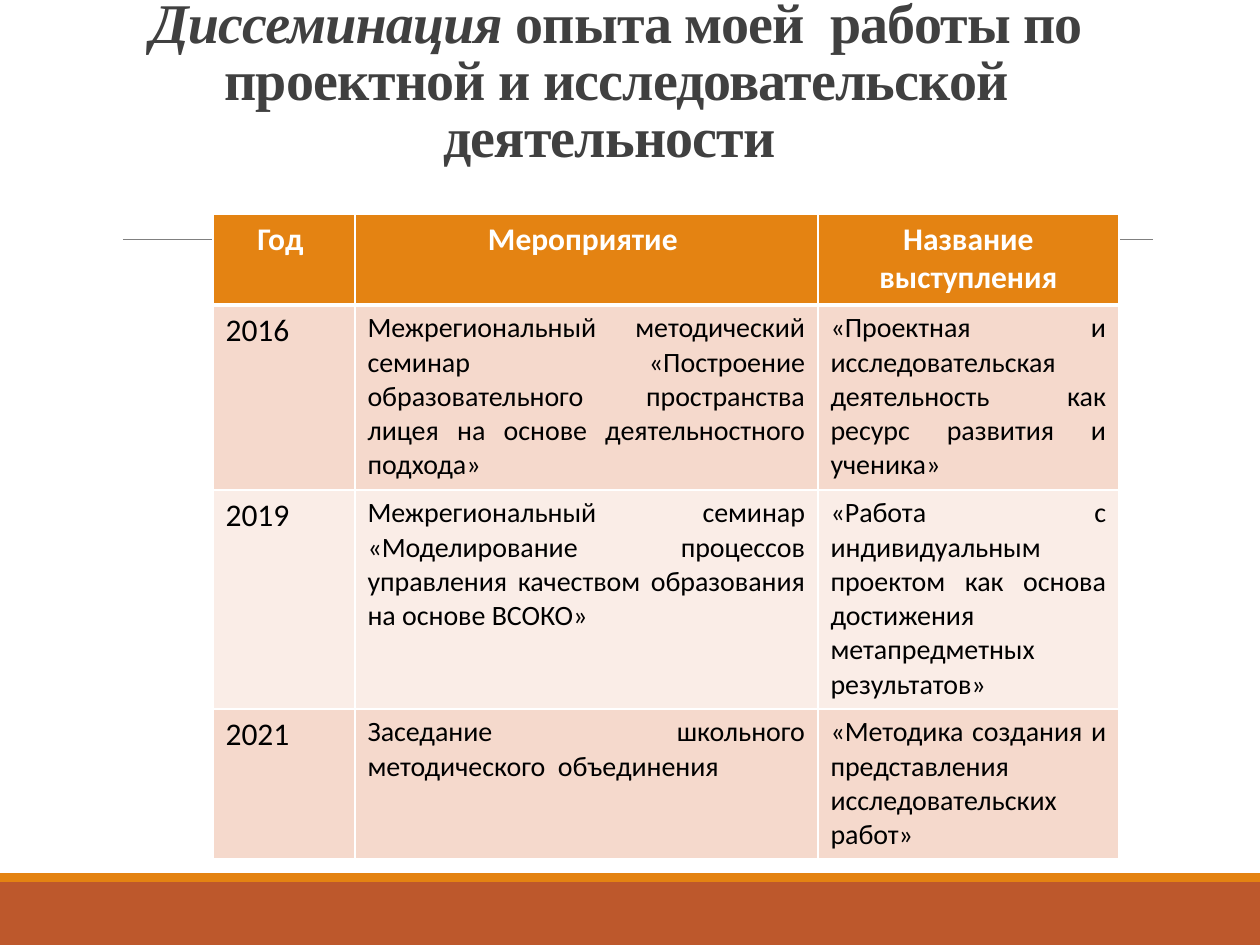
from dataclasses import dataclass

from lxml.etree import SubElement
from pptx import Presentation
from pptx.dml.color import RGBColor as RGB
from pptx.enum.shapes import MSO_CONNECTOR as Link, MSO_SHAPE as Shape
from pptx.enum.text import MSO_ANCHOR as Anchor, PP_ALIGN as Align
from pptx.oxml.ns import qn
from pptx.util import Emu, Pt

SCALE = 914400 / 126


@dataclass(frozen=True)
class Theme:
    orange: str = "E48312"
    rust: str = "BD582C"
    gray: str = "808080"
    dark: str = "404040"
    white: str = "FFFFFF"
    black: str = "000000"
    bands: tuple = ("F5D9CC", "FAEDE7")
    serif: str = "Times New Roman"
    sans: str = "Calibri"
    title: int = 32
    head: int = 18
    body: int = 16


THEME = Theme()

TITLE = (
    ("Диссеминация", True),
    (" опыта моей  работы по проектной и исследовательской деятельности ", False),
)
COLS = (142, 463, 301)
ROWS = (91, 185, 219, 150)
DATA = (
    ("Год ", "Мероприятие ", "Название выступления"),
    ("2016",
     "Межрегиональный методический семинар «Построение образовательного "
     "пространства лицея на основе деятельностного подхода»",
     "«Проектная и исследовательская деятельность как ресурс развития и ученика»"),
    ("2019",
     "Межрегиональный семинар «Моделирование процессов управления качеством "
     "образования на основе ВСОКО»",
     "«Работа с индивидуальным проектом как основа достижения "
     "метапредметных результатов»"),
    ("2021",
     "Заседание школьного методического  объединения",
     "«Методика создания и представления исследовательских работ»"),
)


def px(num):
    return Emu(round(num * SCALE))


def color(code):
    return RGB.from_string(code)


def style(font, name, size, tint, bold):
    font.name, font.size, font.bold = name, Pt(size), bold
    font.color.rgb = color(tint)


def edge(cell, side, width):
    line = SubElement(cell._tc.get_or_add_tcPr(), qn(f"a:ln{side}"), w=str(Pt(width)))
    fill = SubElement(line, qn("a:solidFill"))
    SubElement(fill, qn("a:srgbClr"), val=THEME.white)


def bar(slide, x, y, w, h, tint):
    rect = slide.shapes.add_shape(Shape.RECTANGLE, px(x), px(y), px(w), px(h))
    rect.shadow.inherit = False
    rect.fill.solid()
    rect.fill.fore_color.rgb = color(tint)
    rect.line.fill.background()


def footer(slide, x, y, w, h):
    strip = 9
    bar(slide, x, y + strip, w, h - strip, THEME.rust)
    bar(slide, x, y, w, strip, THEME.orange)


def rule(slide, x, y, w):
    line = slide.shapes.add_connector(Link.STRAIGHT, px(x), px(y), px(x + w), px(y))
    line.line.color.rgb = color(THEME.gray)
    line.line.width = Pt(0.5)
    SubElement(line._element.spPr, qn("a:effectLst"))


def title(slide, x, y, w, h):
    frame = slide.shapes.add_textbox(px(x), px(y), px(w), px(h)).text_frame
    frame.word_wrap = True
    frame.vertical_anchor = Anchor.BOTTOM
    para = frame.paragraphs[0]
    para.alignment = Align.CENTER
    para.line_spacing = 0.85
    for text, slant in TITLE:
        run = para.add_run()
        run.text = text
        style(run.font, THEME.serif, THEME.title, THEME.dark, True)
        run.font.italic = slant
        run._r.get_or_add_rPr().set("spc", "-50")


def fill_cell(cell, text, row, col):
    head = row == 0
    # Borders: a thick rule parts the header from the body
    widths = {"L": 1, "R": 1, "T": 3 if row == 1 else 1, "B": 3 if head else 1}
    for side, width in widths.items():
        edge(cell, side, width)
    cell.fill.solid()
    cell.fill.fore_color.rgb = color(THEME.orange if head else THEME.bands[(row - 1) % 2])
    # Text
    para = cell.text_frame.paragraphs[0]
    para.text = text
    para.alignment = Align.CENTER if head else Align.JUSTIFY
    size = THEME.head if head or col == 0 else THEME.body
    tint = THEME.white if head else THEME.black
    style(para.runs[0].font, THEME.sans, size, tint, head)


def events(slide, x, y):
    table = slide.shapes.add_table(
        len(ROWS), len(COLS), px(x), px(y), px(sum(COLS)), px(sum(ROWS))).table
    for col, width in zip(table.columns, COLS):
        col.width = px(width)
    for row, height in zip(table.rows, ROWS):
        row.height = px(height)
    for r, texts in enumerate(DATA):
        for c, text in enumerate(texts):
            fill_cell(table.cell(r, c), text, r, c)


def main():
    deck = Presentation()
    deck.slide_width, deck.slide_height = px(1260), px(945)
    slide = deck.slides.add_slide(deck.slide_layouts[6])
    footer(slide, 0, 873, 1260, 72)
    rule(slide, 123, 239, 1030)
    title(slide, 113, 86, 1006, 89)
    events(slide, 213, 214)
    deck.save("out.pptx")


if __name__ == "__main__":
    main()
